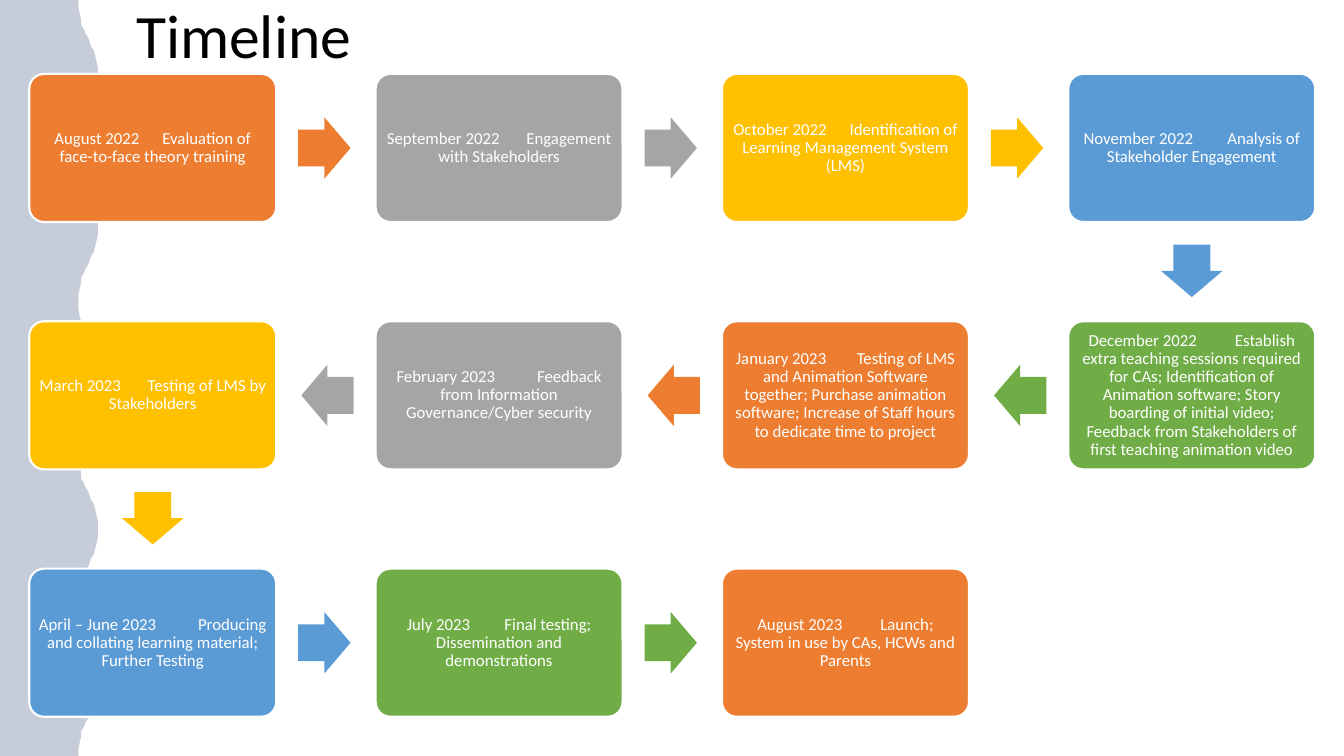
"""Build the project timeline slide: a serpentine of milestones beside a wavy band."""
from lxml import etree
from pptx import Presentation
from pptx.dml.color import RGBColor
from pptx.enum import shapes, text
from pptx.oxml import ns
from pptx.util import Pt

WHITE = RGBColor(0xFF, 0xFF, 0xFF)
BLACK = RGBColor(0x00, 0x00, 0x00)
NAVY = RGBColor(0x20, 0x38, 0x64)
ORANGE = RGBColor(0xED, 0x7D, 0x31)
GREY = RGBColor(0xA5, 0xA5, 0xA5)
GOLD = RGBColor(0xFF, 0xC0, 0x00)
BLUE = RGBColor(0x5B, 0x9B, 0xD5)
GREEN = RGBColor(0x70, 0xAD, 0x47)

PAGE_WIDTH, PAGE_HEIGHT = 960, 540
WAVE_LENGTH = 108
CARD_WIDTH, CARD_HEIGHT = 176.4, 105.8
FIRST_CENTER_X, FIRST_CENTER_Y = 109.1, 105.7
COLUMN_STEP, ROW_STEP = 247.4, 176.7
ARROW_WIDTH, ARROW_HEIGHT = 37.4, 43.9
ARROW_SHIFT_X, ARROW_SHIFT_Y = 122.6, 87.8
SPACE_WIDTH = 2.71
DIRECTIONS = {"right": (1, 0, 0), "down": (0, 1, 90), "left": (-1, 0, 180)}

MILESTONES = [
    (0, 0, ORANGE, "right", "August 2022", 6, "Evaluation of face-to-face theory training"),
    (1, 0, GREY, "right", "September 2022", 7, "Engagement with Stakeholders"),
    (2, 0, GOLD, "right", "October 2022", 6,
     "Identification of Learning Management System (LMS)"),
    (3, 0, BLUE, "down", "November 2022", 9, "Analysis of Stakeholder Engagement"),
    (3, 1, GREEN, "left", "December 2022", 10,
     "Establish extra teaching sessions required for CAs; Identification of Animation "
     "software; Story boarding of initial video; Feedback from Stakeholders of first "
     "teaching animation video"),
    (2, 1, ORANGE, "left", "January 2023", 8,
     "Testing of LMS and Animation Software together; Purchase animation software; "
     "Increase of Staff hours to dedicate time to project"),
    (1, 1, GREY, "left", "February 2023", 11,
     "Feedback from Information Governance/Cyber security"),
    (0, 1, GOLD, "down", "March 2023", 7, "Testing of LMS by Stakeholders"),
    (0, 2, BLUE, "right", "April – June 2023", 11,
     "Producing and collating learning material; Further Testing"),
    (1, 2, GREEN, "right", "July 2023", 9,
     "Final testing; Dissemination and demonstrations"),
    (2, 2, ORANGE, None, "August 2023", 10,
     "Launch; System in use by CAs, HCWs and Parents"),
]


def add_span(para, words, size=12, color=WHITE, gap=0):
    span = para.add_run()
    span.text = words
    span.font.name = "Calibri"
    span.font.size = Pt(size)
    span.font.color.rgb = color
    if gap:
        span.font._element.set("spc", str(round(gap * 100)))


def add_block(kind, center_x, center_y, width, height, color, adjustments):
    block = page.shapes.add_shape(
        kind, Pt(center_x - width / 2), Pt(center_y - height / 2), Pt(width), Pt(height))
    block.shadow.inherit = False
    block.fill.solid()
    block.fill.fore_color.rgb = color
    block.line.fill.background()
    for index, value in enumerate(adjustments):
        block.adjustments[index] = value
    return block


deck = Presentation()
deck.slide_width, deck.slide_height = Pt(PAGE_WIDTH), Pt(PAGE_HEIGHT)
page = deck.slides.add_slide(deck.slide_layouts[5])

title = page.shapes.title
title.left, title.top, title.width, title.height = Pt(90), Pt(0), Pt(799), Pt(117)
title.text_frame.vertical_anchor = text.MSO_ANCHOR.TOP
title.text_frame.auto_size = text.MSO_AUTO_SIZE.NONE
heading = title.text_frame.paragraphs[0]
heading.alignment = text.PP_ALIGN.LEFT
heading.line_spacing = 0.9
add_span(heading, "Timeline", size=44, color=BLACK)

rising = [(56.2, 0), (56.2, 5), (56.9, 10), (57.6, 14.4), (58.5, 18), (59.8, 21),
          (61.2, 24), (62.6, 27), (64, 30), (65.4, 33), (66.8, 36), (68.2, 39.6),
          (69.2, 44), (69.8, 49), (69.9, 54)]
falling = [(x, WAVE_LENGTH - y) for x, y in reversed(rising[:-1])]
edge = [(x, y + start) for start in range(0, PAGE_HEIGHT, WAVE_LENGTH)
        for x, y in rising + falling]
for color, opacity in ((WHITE, 100), (NAVY, 25)):
    builder = page.shapes.build_freeform(0, 0, scale=Pt(1))
    builder.add_line_segments(edge + [(0, PAGE_HEIGHT)], close=True)
    band = builder.convert_to_shape()
    band.shadow.inherit = False
    band.fill.solid()
    band.fill.fore_color.rgb = color
    band.line.fill.background()
    if opacity < 100:
        tint = band._element.spPr.find(".//" + ns.qn("a:srgbClr"))
        etree.SubElement(tint, ns.qn("a:alpha"), val=str(opacity * 1000))

for column, row, color, direction, date, spaces, task in MILESTONES:
    center_x = FIRST_CENTER_X + column * COLUMN_STEP
    center_y = FIRST_CENTER_Y + row * ROW_STEP
    card = add_block(shapes.MSO_SHAPE.ROUNDED_RECTANGLE, center_x, center_y,
                     CARD_WIDTH, CARD_HEIGHT, color, [0.1])
    card.line.color.rgb = WHITE
    card.line.width = Pt(1.5)
    frame = card.text_frame
    frame.word_wrap = True
    frame.vertical_anchor = text.MSO_ANCHOR.MIDDLE
    frame.margin_left = frame.margin_right = Pt(3.6)
    frame.margin_top = frame.margin_bottom = Pt(3.6)
    para = frame.paragraphs[0]
    para.alignment = text.PP_ALIGN.CENTER
    para.line_spacing = 0.9
    add_span(para, date)
    add_span(para, " ", gap=(spaces - 1) * SPACE_WIDTH)
    add_span(para, task)
    if direction:
        across, down, angle = DIRECTIONS[direction]
        arrow = add_block(shapes.MSO_SHAPE.RIGHT_ARROW,
                          center_x + across * ARROW_SHIFT_X,
                          center_y + down * ARROW_SHIFT_Y,
                          ARROW_WIDTH, ARROW_HEIGHT, color, [0.6, 0.5])
        arrow.rotation = angle

deck.save("out.pptx")
